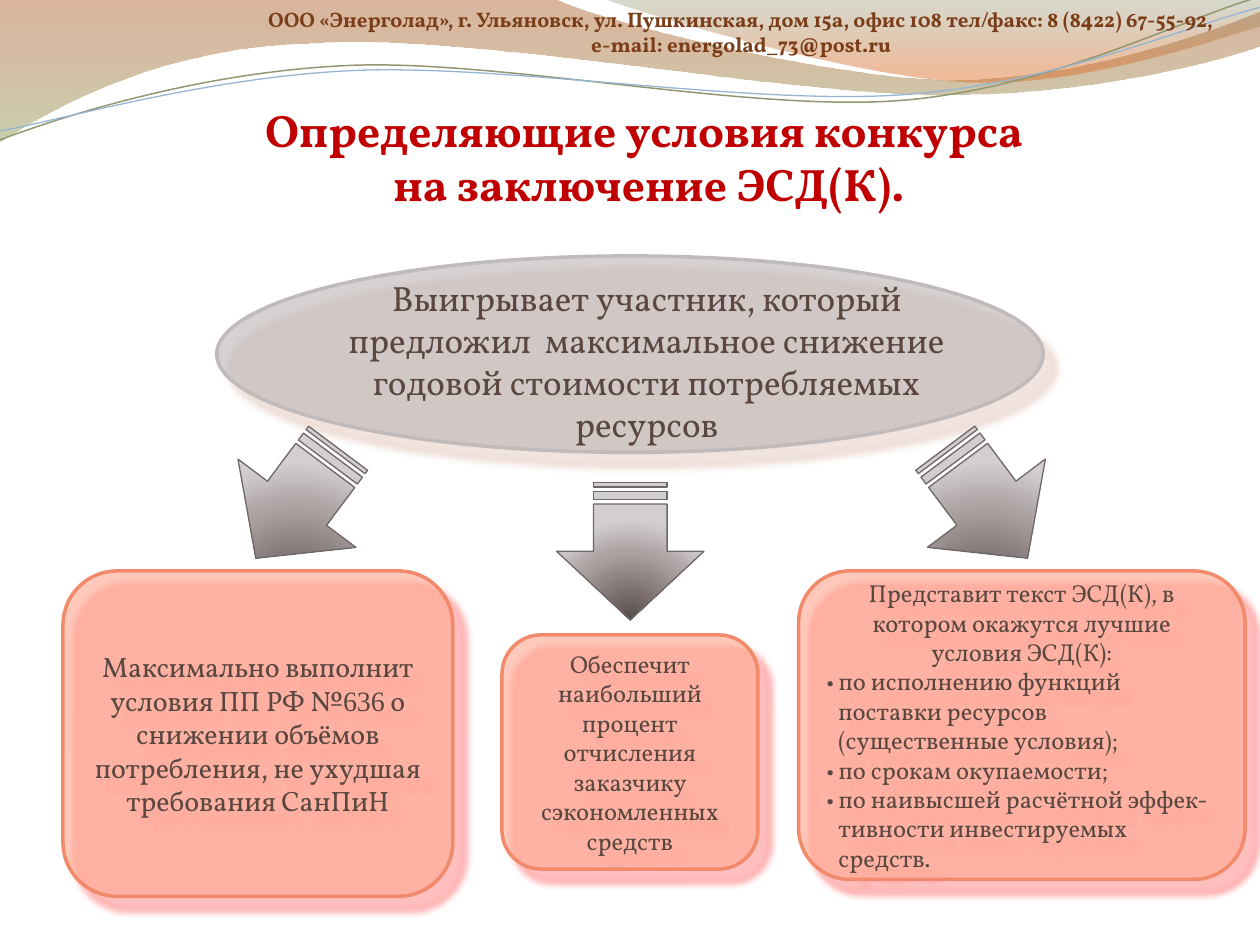
from dataclasses import dataclass

from lxml import etree
from pptx import Presentation
from pptx.dml.color import RGBColor
from pptx.enum.shapes import MSO_SHAPE
from pptx.enum.text import MSO_ANCHOR, MSO_AUTO_SIZE, PP_ALIGN
from pptx.oxml import parse_xml
from pptx.oxml.ns import nsdecls, qn
from pptx.util import Cm, Pt


def color(hex_text):
    return RGBColor.from_string(hex_text)


def color_xml(hex_text, opacity=100):
    return (f'<a:srgbClr {nsdecls("a")} val="{hex_text}">'
            f'<a:alpha val="{opacity * 1000}"/></a:srgbClr>')


def write(frame, paragraphs, font, size, ink, bold=False, align=PP_ALIGN.CENTER):
    """Fill a frame; '•' paragraphs hang, (text, font) tuples are runs."""
    frame.word_wrap = True
    for index, runs in enumerate(paragraphs):
        paragraph = frame.paragraphs[0] if index == 0 else frame.add_paragraph()
        paragraph.alignment = align
        if isinstance(runs, str):
            if runs.startswith("•"):
                paragraph.alignment = PP_ALIGN.LEFT
                properties = paragraph._p.get_or_add_pPr()
                properties.set("marL", str(Cm(0.25)))
                properties.set("indent", str(-Cm(0.25)))
            runs = [(runs, font)]
        for text, run_font in runs:
            run = paragraph.add_run()
            run.text = text
            run.font.name = run_font
            run.font.size = Pt(size)
            run.font.bold = bold
            run.font.color.rgb = color(ink)


def bend(outline, pieces):
    """Turn each run of three line segments that forms a piece into one curve."""
    segments = iter(list(outline._element.iter(qn("a:lnTo"))))
    for piece in pieces:
        lines = [next(segments) for _ in piece]
        if len(lines) == 3:
            curve = etree.Element(qn("a:cubicBezTo"))
            lines[0].addprevious(curve)
            for line in lines:
                curve.append(line[0])
                line.getparent().remove(line)


@dataclass
class ConditionsSlide:
    slide: object
    font: str = "Vollkorn"
    ink: str = "594740"

    def title(self, lines, box, size, ink):
        title = self.slide.shapes.title
        title.left, title.top, title.width, title.height = map(Cm, box)
        title.text_frame.auto_size = MSO_AUTO_SIZE.NONE
        title.text_frame.vertical_anchor = MSO_ANCHOR.TOP
        write(title.text_frame, lines, self.font, size, ink, bold=True)

    def label(self, lines, box, size, ink=None, bold=False):
        label = self.slide.shapes.add_textbox(*map(Cm, box))
        write(label.text_frame, lines, self.font, size, ink or self.ink, bold)
        label.text_frame.auto_size = MSO_AUTO_SIZE.SHAPE_TO_FIT_TEXT

    def gradient(self, shape, stops, direction):
        shape.fill.solid()
        stop_xml = "".join(f'<a:gs pos="{position * 1000}">{color_xml(*tint)}</a:gs>'
                           for position, *tint in stops)
        solid = shape._element.spPr.find(qn("a:solidFill"))
        solid.getparent().replace(solid, parse_xml(
            f'<a:gradFill {nsdecls("a")} rotWithShape="1">'
            f'<a:gsLst>{stop_xml}</a:gsLst>{direction}</a:gradFill>'))

    def shadow(self, shape, tint, opacity, blur, distance, angle):
        shape.shadow.inherit = False
        effects = shape._element.spPr.find(qn("a:effectLst"))
        effects.append(parse_xml(
            f'<a:outerShdw {nsdecls("a")} blurRad="{Pt(blur)}" dist="{Pt(distance)}" '
            f'dir="{angle * 60000}" algn="ctr" rotWithShape="0">'
            f'{color_xml(tint, opacity)}</a:outerShdw>'))

    def wave(self, start, pieces, stops=None, line=None, width=0.75):
        """A piece is one point (straight) or three points (curve)."""
        builder = self.slide.shapes.build_freeform(
            *(Cm(value) for value in start), scale=1.0)
        builder.add_line_segments([(Cm(x), Cm(y)) for piece in pieces for x, y in piece],
                                  close=stops is not None)
        wave = builder.convert_to_shape()
        bend(wave, pieces)
        wave.shadow.inherit = False
        if stops:
            wave.line.fill.background()
            self.gradient(wave, stops, '<a:lin ang="5400000" scaled="0"/>')
        else:
            wave.fill.background()
            wave.line.color.rgb = color(line)
            wave.line.width = Pt(width)

    def panel(self, kind, box, fill, line, shadow, lines=(), size=14):
        panel = self.slide.shapes.add_shape(kind, *map(Cm, box))
        panel.fill.solid()
        panel.fill.fore_color.rgb = color(fill)
        tint = panel._element.spPr.find(qn("a:solidFill"))[0]
        etree.SubElement(tint, qn("a:alpha")).set("val", "64000")
        panel.line.color.rgb = color(line)
        panel.line.width = Pt(2)
        self.shadow(panel, shadow, 40, 4, 10, 48)
        panel.text_frame.vertical_anchor = MSO_ANCHOR.MIDDLE
        write(panel.text_frame, lines, self.font, size, self.ink)

    def arrow(self, left, top, angle):
        arrow = self.slide.shapes.add_shape(
            MSO_SHAPE.STRIPED_RIGHT_ARROW, Cm(left), Cm(top), Cm(2.77), Cm(2.97))
        arrow.rotation = angle
        arrow.shadow.inherit = False
        self.gradient(arrow, [(0, "584B4B"), (68, "ABA2A2"), (100, "D4CFCF")],
                      '<a:path path="circle"><a:fillToRect l="50000" t="130000" '
                      'r="50000" b="-30000"/></a:path>')
        arrow.line.color.rgb = color("6F6767")
        arrow.line.width = Pt(0.75)


def main():
    deck = Presentation()
    deck.slide_width, deck.slide_height = Cm(25.4), Cm(19.05)
    page = ConditionsSlide(deck.slides.add_slide(deck.slide_layouts[5]))

    # Waves along the top
    page.wave((0, 0), [
        [(11.18, -0.03)],
        [(12.09, 0.43), (16.87, 1.6), (19.25, 1.6)],
        [(21.67, 1.6), (24.33, 0.66), (25.4, 0.23)],
        [(25.43, 0.91)],
        [(24.97, 1.12), (22.1, 1.93), (18.95, 1.91)],
        [(15.8, 1.91), (9.7, 0.71), (6.53, 0.86)],
        [(3.28, 0.91), (1.17, 2.11), (-0.03, 2.87)],
    ], stops=[(0, "AF5C29", 45), (100, "9DA66B", 55)])
    page.wave((12.17, -0.03), [
        [(12.93, 0.28), (17.32, 1.57), (19.53, 1.65)],
        [(21.74, 1.75), (24.41, 0.81), (25.4, 0.53)],
        [(25.4, 0)],
    ], stops=[(0, "7D835B", 30), (80, "DD6B24", 45)])
    page.wave((0, 2.82), [
        [(1.22, 2.36), (4.01, 1.45), (7.04, 1.32)],
        [(10.03, 1.19), (15.06, 2.26), (18.11, 2.03)],
        [(21.16, 1.8), (23.83, 0.38), (25.35, -0.05)],
    ], line="929772", width=0.85)
    page.wave((0, 2.64), [
        [(1.19, 2.44), (4.14, 1.55), (7.19, 1.42)],
        [(10.24, 1.3), (15.16, 2.13), (18.21, 1.91)],
        [(21.23, 1.7), (23.9, 0.53), (25.4, 0.15)],
    ], line="94B6D2")

    # Contact line and title
    page.label(["ООО «Энерголад», г. Ульяновск, ул. Пушкинская, дом 15а, офис 108 "
                "тел/факс: 8 (8422) 67-55-92, ", "e-mail: energolad_73@post.ru "],
               (4.57, 0, 20.83, 1.27), 12, "7B3D17", bold=True)
    page.title(["Определяющие условия конкурса ", "на заключение ЭСД(К)."],
               (1.58, 1.92, 23.01, 2.49), 26, "C00000")

    # Main condition
    page.panel(MSO_SHAPE.OVAL, (4.37, 5.16, 16.66, 3.96), "C0BABA", "C0BABA", "C9937D")

    # Three supporting conditions
    conditions = [
        ((1.27, 11.51, 7.86, 6.56), 16, [[
            ("Максимально выполнит условия ПП РФ №", page.font),
            ("636", "Times New Roman"),
            (" о снижении объёмов потребления, не ухудшая требования СанПиН", page.font)]]),
        ((10.12, 12.8, 5.16, 4.72), 14, [
            "Обеспечит наибольший процент отчисления заказчику сэкономленных средств"]),
        ((16.1, 11.51, 9, 6.22), 14, [
            "Представит текст ЭСД(К), в котором окажутся лучшие условия ЭСД(К):",
            "• по исполнению функций поставки ресурсов (существенные условия);",
            "• по срокам окупаемости;",
            "• по наивысшей расчётной эффек-тивности инвестируемых средств."]),
    ]
    for box, size, lines in conditions:
        page.panel(MSO_SHAPE.ROUNDED_RECTANGLE, box, "FEAB94", "F08A6A", "FF0505",
                   lines, size)

    page.label(["Выигрывает участник, который предложил  максимальное снижение "
                "годовой стоимости потребляемых ресурсов"], (5.99, 5.45, 14.1, 3.68), 20)

    # Arrows from the main condition
    for left, top, angle in [(11.32, 9.63, 90), (18.5, 8.66, 53.2), (4.6, 8.66, 126.8)]:
        page.arrow(left, top, angle)

    deck.save("out.pptx")


if __name__ == "__main__":
    main()
